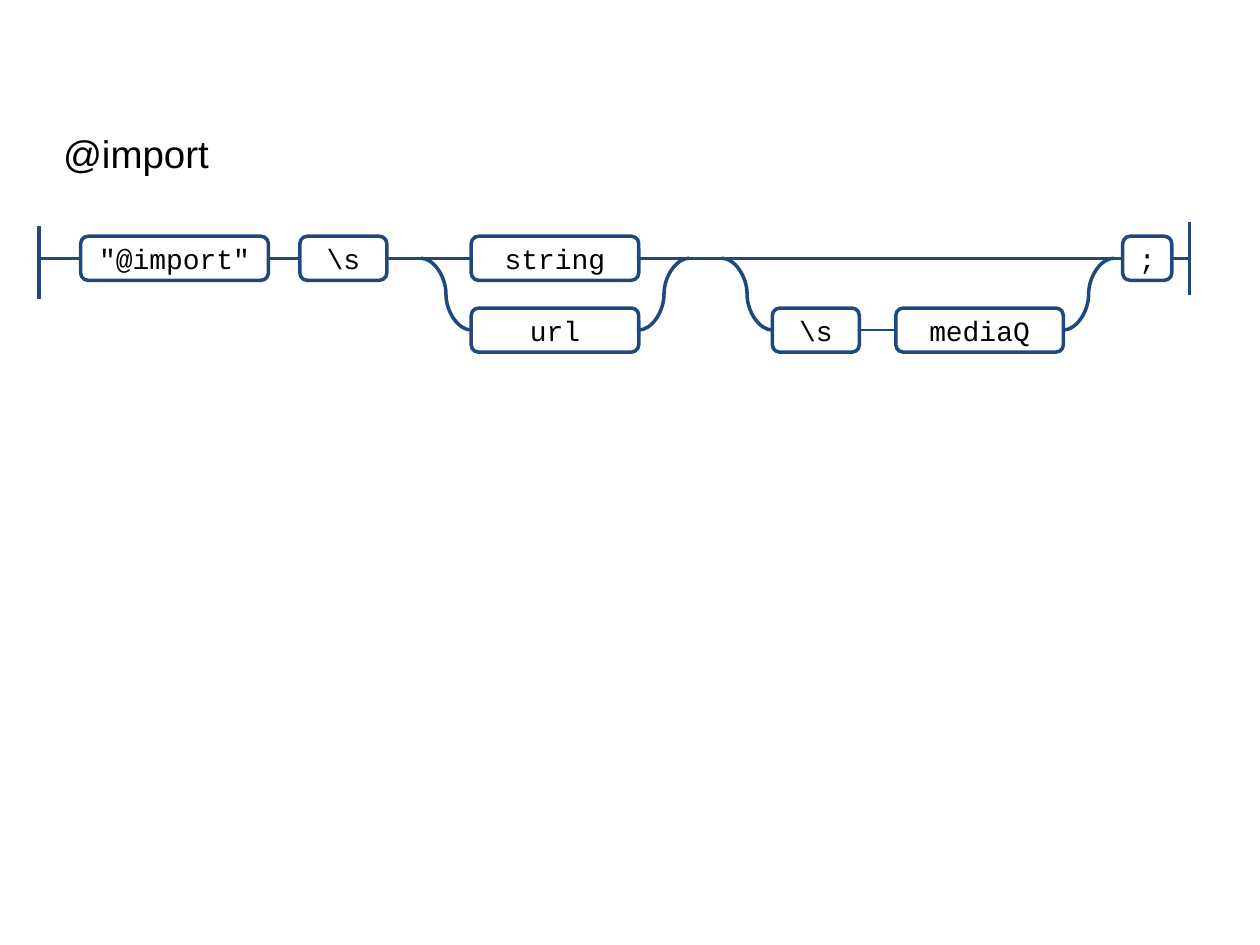
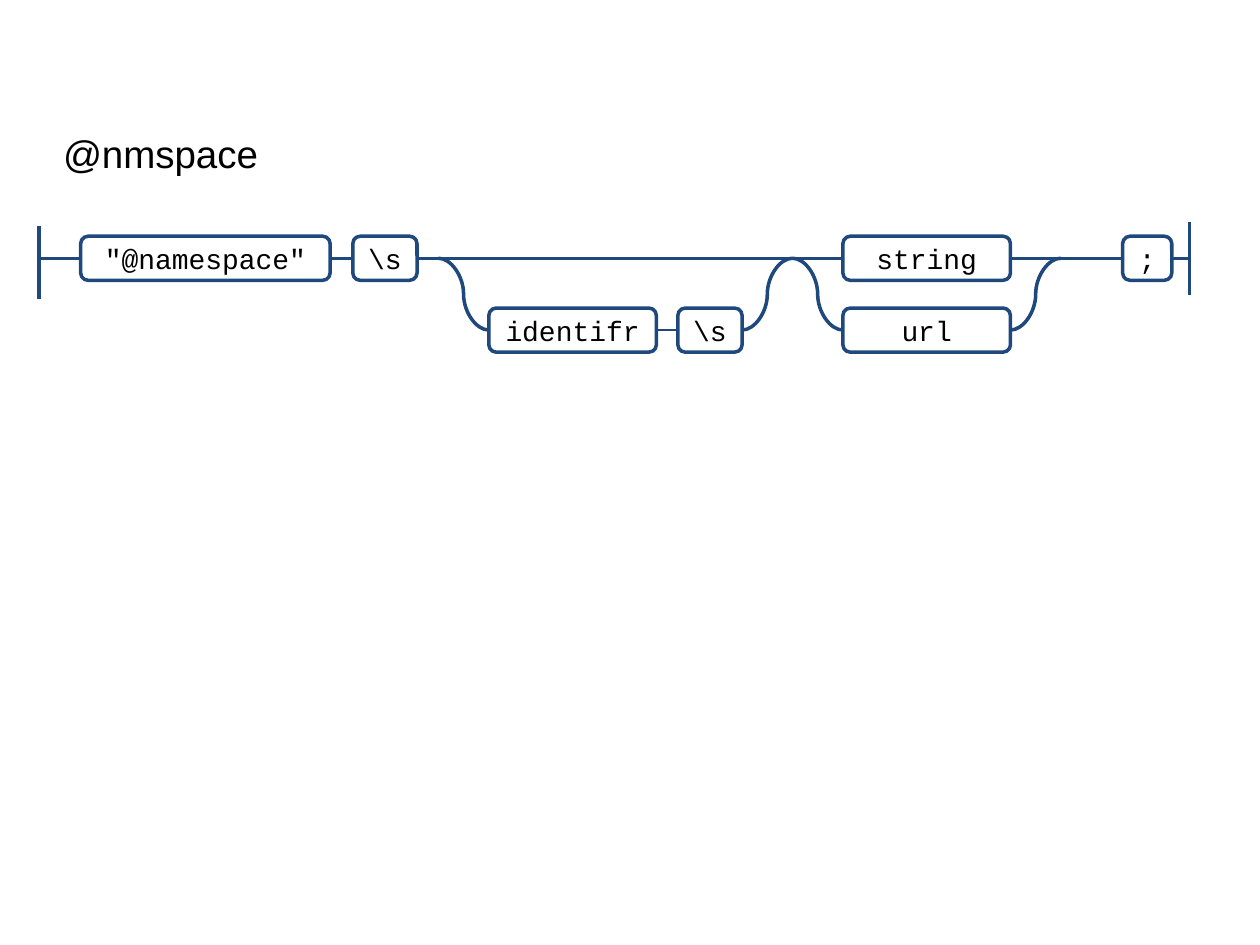
import pptx
import pptx.util
import pptx.dml.color
import pptx.enum.shapes
import pptx.enum.text
import pptx.oxml.ns
import lxml.etree

Inches = pptx.util.Inches
Pt = pptx.util.Pt
RGBColor = pptx.dml.color.RGBColor
MSO_CONNECTOR = pptx.enum.shapes.MSO_CONNECTOR
MSO_SHAPE = pptx.enum.shapes.MSO_SHAPE
MSO_ANCHOR = pptx.enum.text.MSO_ANCHOR
PP_ALIGN = pptx.enum.text.PP_ALIGN

BLUE = RGBColor(0x1F, 0x49, 0x7D)
BLACK = RGBColor(0, 0, 0)
WHITE = RGBColor(0xFF, 0xFF, 0xFF)

RAIL_Y, BRANCH_Y = 2.05, 2.62
START_X, END_X = 0.31, 9.44
BOX_H, CURVE_W = 0.35, 0.4
TITLE_BOX = {"left": Inches(0.4), "top": Inches(0.98), "width": Inches(5.89), "height": Inches(0.47)}
TITLE_FRAME = {"vertical_anchor": MSO_ANCHOR.TOP, "word_wrap": True}
TITLE_FONT = {"name": "Arial", "size": Pt(22)}
BOX_FRAME = {"vertical_anchor": MSO_ANCHOR.MIDDLE, "word_wrap": True, "margin_left": 0, "margin_right": 0}
BOX_FONT = {"name": "Courier New", "size": Pt(16)}

DIAGRAMS = [
    {
        "title": "@import",
        "rail": [('"@import"', 0.64, 1.49), ("\\s", 2.38, 0.69), ("string", 3.74, 1.33), (";", 8.91, 0.39)],
        "branches": [
            [("url", 3.74, 1.33)],
            [("\\s", 6.13, 0.69), ("mediaQ", 7.11, 1.33)],
        ],
    },
    {
        "title": "@nmspace",
        "rail": [('"@namespace"', 0.64, 1.98), ("\\s", 2.8, 0.51), ("string", 6.69, 1.33), (";", 8.91, 0.39)],
        "branches": [
            [("identifr", 3.88, 1.33), ("\\s", 5.38, 0.51)],
            [("url", 6.69, 1.33)],
        ],
    },
]


def add_line(s, kind, x1, y1, x2, y2, weight):
    c = s.shapes.add_connector(kind, Inches(x1), Inches(y1), Inches(x2), Inches(y2))
    c.line.color.rgb = BLUE
    c.line.width = Pt(weight)
    lxml.etree.SubElement(c._element.spPr, pptx.oxml.ns.qn("a:effectLst"))
    return c


def add_box(s, text, x, mid_y, w):
    sp = s.shapes.add_shape(MSO_SHAPE.FLOWCHART_ALTERNATE_PROCESS,
                            Inches(x), Inches(mid_y - BOX_H / 2), Inches(w), Inches(BOX_H))
    sp.shadow.inherit = False
    sp.fill.solid()
    sp.fill.fore_color.rgb = WHITE
    sp.line.color.rgb = BLUE
    sp.line.width = Pt(2)
    tf = sp.text_frame
    for key, value in BOX_FRAME.items():
        setattr(tf, key, value)
    p = tf.paragraphs[0]
    p.alignment = PP_ALIGN.CENTER
    r = p.add_run()
    r.text = text
    r.font.color.rgb = BLACK
    for key, value in BOX_FONT.items():
        setattr(r.font, key, value)
    return sp


prs = pptx.Presentation()
prs.slide_width = Inches(10)
prs.slide_height = Inches(7.5)

for diagram in DIAGRAMS:
    s = prs.slides.add_slide(prs.slide_layouts[5])
    title = s.shapes.title
    for key, value in TITLE_BOX.items():
        setattr(title, key, value)
    tf = title.text_frame
    for key, value in TITLE_FRAME.items():
        setattr(tf, key, value)
    p = tf.paragraphs[0]
    p.alignment = PP_ALIGN.LEFT
    r = p.add_run()
    r.text = diagram["title"]
    r.font.color.rgb = BLACK
    for key, value in TITLE_FONT.items():
        setattr(r.font, key, value)

    add_line(s, MSO_CONNECTOR.STRAIGHT, START_X, RAIL_Y, END_X, RAIL_Y, 1.5)
    for x, top in ((START_X, 1.79), (END_X, 1.76)):
        add_line(s, MSO_CONNECTOR.STRAIGHT, x, top, x, top + 0.58, 2)

    for text, x, w in diagram["rail"]:
        add_box(s, text, x, RAIL_Y, w)

    for branch in diagram["branches"]:
        left = branch[0][1]
        right = branch[-1][1] + branch[-1][2]
        for x, rail_x in ((left, left - CURVE_W), (right, right + CURVE_W)):
            add_line(s, MSO_CONNECTOR.CURVE, x, BRANCH_Y, rail_x, RAIL_Y, 2)
        boxes = [add_box(s, text, x, BRANCH_Y, w) for text, x, w in branch]
        for before, after in zip(boxes, boxes[1:]):
            link = add_line(s, MSO_CONNECTOR.STRAIGHT, left, BRANCH_Y, right, BRANCH_Y, 1.5)
            link.begin_connect(before, 3)
            link.end_connect(after, 1)

prs.save("out.pptx")
